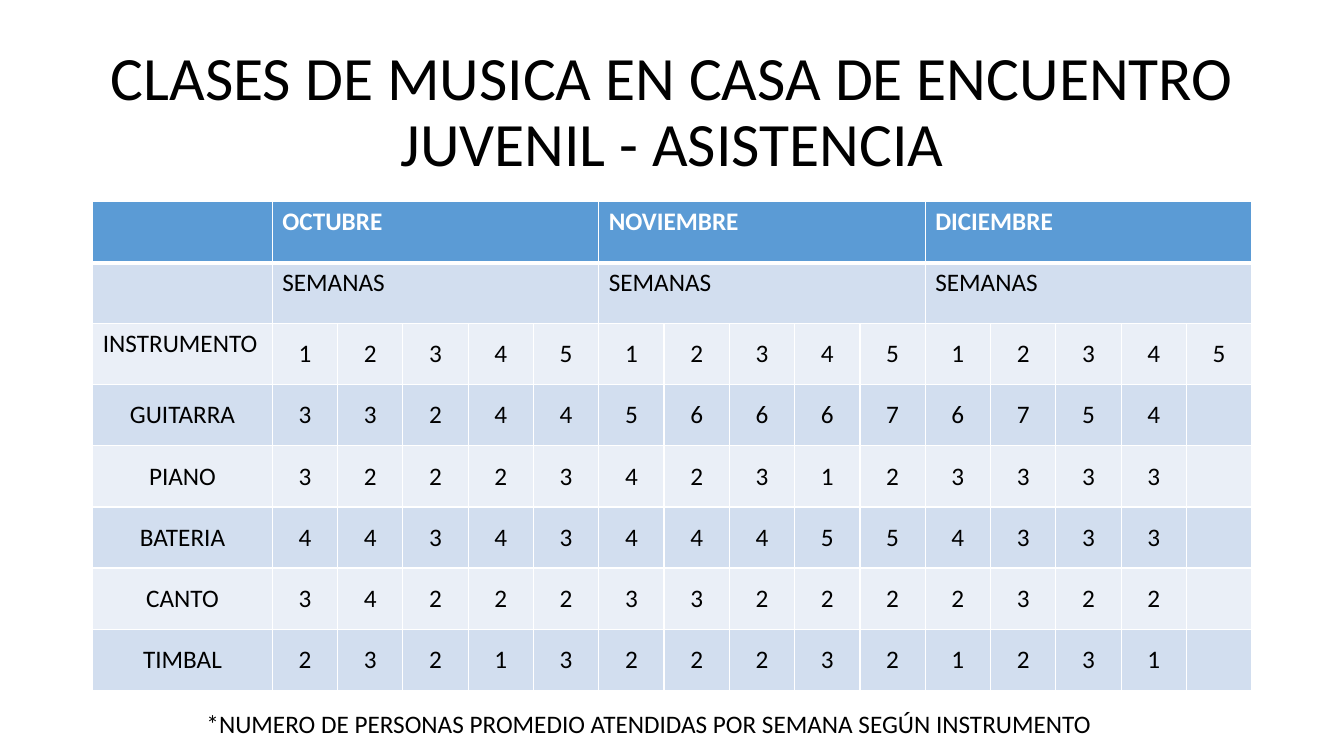
from lxml.etree import SubElement
from pptx import Presentation
from pptx.dml.color import RGBColor
from pptx.enum.text import MSO_ANCHOR as Anchor, MSO_AUTO_SIZE as AutoSize, PP_ALIGN as Align
from pptx.oxml.ns import qn
from pptx.util import Emu, Inches, Pt

COLORS = {
    "text": "000000",
    "white": "FFFFFF",
    "header": "5B9BD5",
    "band_dark": "D2DEEF",
    "band_light": "EAEFF7",
}
FONT = "Calibri"
MONTHS = ["OCTUBRE", "NOVIEMBRE", "DICIEMBRE"]
WEEKS = 5
ATTENDANCE = {
    "GUITARRA": [3, 3, 2, 4, 4, 5, 6, 6, 6, 7, 6, 7, 5, 4],
    "PIANO": [3, 2, 2, 2, 3, 4, 2, 3, 1, 2, 3, 3, 3, 3],
    "BATERIA": [4, 4, 3, 4, 3, 4, 4, 4, 5, 5, 4, 3, 3, 3],
    "CANTO": [3, 4, 2, 2, 2, 3, 3, 2, 2, 2, 2, 3, 2, 2],
    "TIMBAL": [2, 3, 2, 1, 3, 2, 2, 2, 3, 2, 1, 2, 3, 1],
}


def write(frame, text, size=18, color="text", bold=False, align=Align.LEFT,
          anchor=Anchor.TOP, spacing=None):
    frame.word_wrap = True
    frame.vertical_anchor = anchor
    para = frame.paragraphs[0]
    para.alignment = align
    para.line_spacing = spacing
    span = para.add_run()
    span.text = text
    span.font.name = FONT
    span.font.size = Pt(size)
    span.font.bold = bold
    span.font.color.rgb = RGBColor.from_string(COLORS[color])


def write_cell(cell, text, anchor=Anchor.TOP, **style):
    write(cell.text_frame, text, **style)
    cell.vertical_anchor = anchor


def paint_cell(cell, color, bottom=1):
    properties = cell._tc.get_or_add_tcPr()
    for side, width in (("L", 1), ("R", 1), ("T", 1), ("B", bottom)):
        line = SubElement(properties, qn(f"a:ln{side}"), w=str(Pt(width)))
        fill = SubElement(line, qn("a:solidFill"))
        SubElement(fill, qn("a:srgbClr"), val=COLORS["white"])
    cell.fill.solid()
    cell.fill.fore_color.rgb = RGBColor.from_string(COLORS[color])


def place_title(page, box, text):
    title = page.shapes.title
    title.left, title.top, title.width, title.height = box
    write(title.text_frame, text, size=44, align=Align.CENTER,
          anchor=Anchor.MIDDLE, spacing=0.9)
    title.text_frame.auto_size = AutoSize.NONE


def place_attendance(page, box):
    left, top, width, height = box
    week_count = len(MONTHS) * WEEKS
    row_count = 3 + len(ATTENDANCE)
    table = page.shapes.add_table(row_count, 1 + week_count, *box).table
    label_width = Inches(1.78)
    week_width = Emu((width - label_width) // week_count)
    for index, column in enumerate(table.columns):
        column.width = week_width if index else label_width

    for index, row in enumerate(table.rows):
        row.height = Emu(height // row_count)
        band = "band_dark" if index % 2 else "band_light"
        for cell in row.cells:
            paint_cell(cell, band if index else "header", 1 if index else 3)

    for index, month in enumerate(MONTHS):
        first = 1 + index * WEEKS
        for row in (0, 1):
            table.cell(row, first).merge(table.cell(row, first + WEEKS - 1))
        write_cell(table.cell(0, first), month, color="white", bold=True)
        write_cell(table.cell(1, first), "SEMANAS")

    centred = {"align": Align.CENTER, "anchor": Anchor.MIDDLE}
    write_cell(table.cell(2, 0), "INSTRUMENTO")
    for index in range(week_count):
        write_cell(table.cell(2, 1 + index), str(index % WEEKS + 1), **centred)
    for row, (instrument, counts) in enumerate(ATTENDANCE.items(), start=3):
        for column, value in enumerate([instrument, *counts]):
            write_cell(table.cell(row, column), str(value), **centred)


def place_note(page, box, text):
    note = page.shapes.add_textbox(*box)
    write(note.text_frame, text)
    note.text_frame.auto_size = AutoSize.SHAPE_TO_FIT_TEXT


def main():
    deck = Presentation()
    deck.slide_width, deck.slide_height = Inches(13.33), Inches(7.5)
    page = deck.slides.add_slide(deck.slide_layouts[5])
    margin = Inches(0.92)
    content_width = Inches(11.5)
    place_title(page, (margin, Inches(0.4), content_width, Inches(1.45)),
                "CLASES DE MUSICA EN CASA DE ENCUENTRO JUVENIL - ASISTENCIA")
    place_attendance(page, (margin, Inches(2), content_width, Inches(4.85)))
    place_note(page, (Inches(1.95), Inches(6.98), Inches(9.2), Inches(0.4)),
               "*NUMERO DE PERSONAS PROMEDIO ATENDIDAS POR SEMANA SEGÚN INSTRUMENTO")
    deck.save("out.pptx")


if __name__ == "__main__":
    main()
